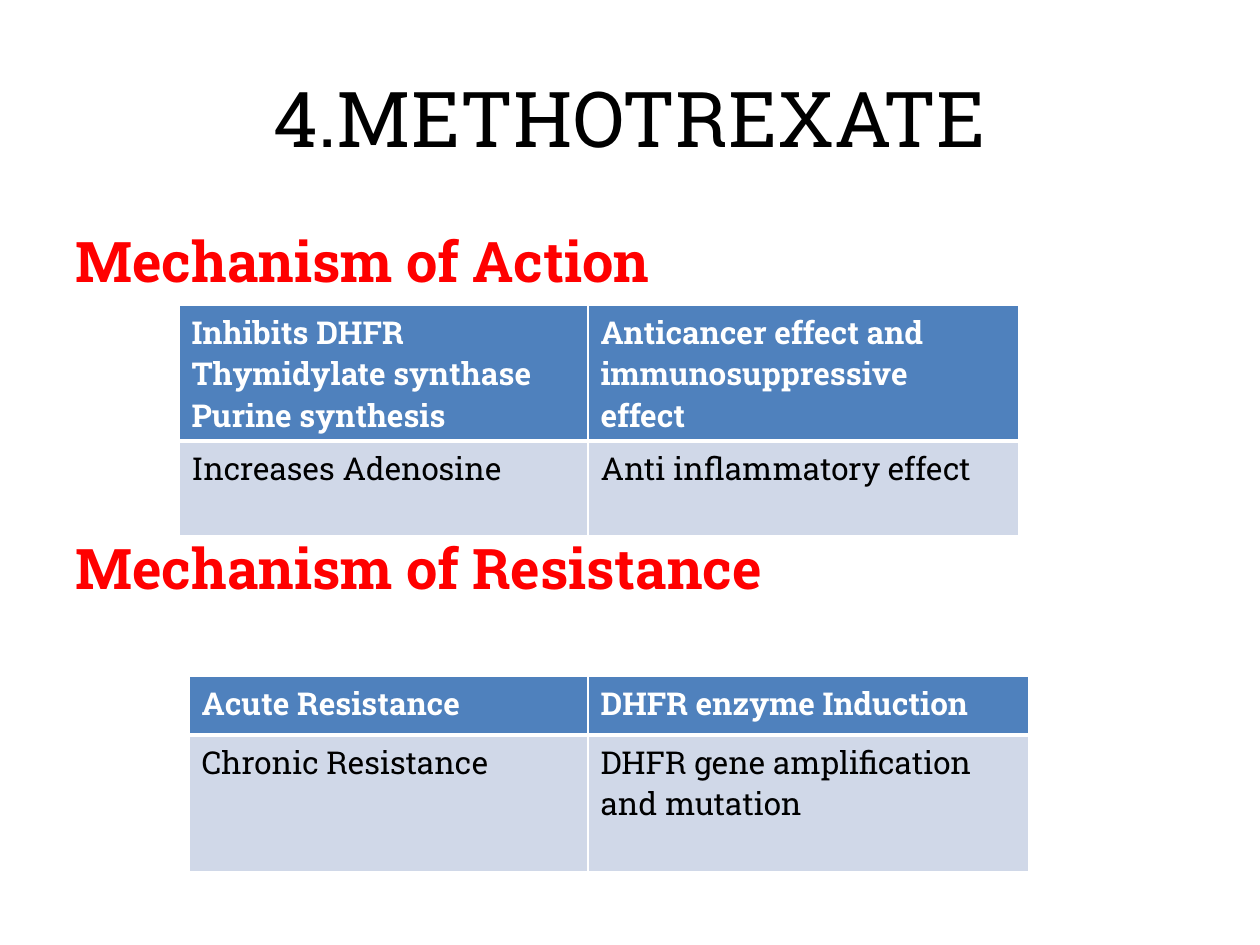
from lxml import etree
from pptx import Presentation
from pptx.dml.color import RGBColor
from pptx.enum.text import MSO_ANCHOR, PP_ALIGN
from pptx.oxml.ns import qn
from pptx.util import Pt

PX = 914400 // 126
FONT = "Roboto Slab"
MIDDLE, TOP = MSO_ANCHOR.MIDDLE, MSO_ANCHOR.TOP
CENTER, LEFT = PP_ALIGN.CENTER, PP_ALIGN.LEFT

TITLE = "4.METHOTREXATE"
HEADINGS = ["Mechanism of Action", "Mechanism of Resistance"]
HEADING_GAP = 137  # points, leaves room for the first table

TABLES = [
    {"left": 179, "top": 305, "columns": [409, 431], "rows": [136, 95],
     "cells": [["Inhibits DHFR Thymidylate synthase Purine synthesis",
                "Anticancer effect and immunosuppressive\veffect"],
               ["Increases Adenosine", "Anti inflammatory effect"]]},
    {"left": 189, "top": 676, "columns": [399, 441], "rows": [59, 137],
     "cells": [["Acute Resistance", "DHFR enzyme Induction"],
               ["Chronic Resistance", "DHFR gene amplification and mutation"]]},
]

TITLE_STYLE = {"size": Pt(44), "bold": False, "color": "000000"}
HEADING_STYLE = {"size": Pt(32), "bold": True, "color": "FF0000"}
ROW_STYLES = [
    {"fill": "4F81BD", "bottom": 3,
     "font": {"size": Pt(18), "bold": True, "color": "FFFFFF"}},
    {"fill": "D0D8E8", "bottom": 1,
     "font": {"size": Pt(18), "bold": False, "color": "000000"}},
]


def rgb(value):
    return RGBColor.from_string(value)


def style_font(font, style):
    font.name = FONT
    for key, value in style.items():
        if key == "color":
            font.color.rgb = rgb(value)
        else:
            setattr(font, key, value)


def add_text(slide, box, lines, style, align, anchor, gap=0):
    frame = slide.shapes.add_textbox(*(n * PX for n in box)).text_frame
    frame.word_wrap = True
    frame.vertical_anchor = anchor
    frame.text = "\n".join(lines)
    for index, paragraph in enumerate(frame.paragraphs):
        paragraph.alignment = align
        paragraph.space_before = Pt(gap if index else 0)
        for run in paragraph.runs:
            style_font(run.font, style)


def set_borders(cell, widths):
    """Draw white borders; they must precede the fill in the cell properties."""
    properties = cell._tc.get_or_add_tcPr()
    for index, (side, width) in enumerate(widths.items()):
        line = etree.Element(qn(f"a:ln{side}"), w=str(Pt(width)))
        fill = etree.SubElement(line, qn("a:solidFill"))
        etree.SubElement(fill, qn("a:srgbClr"), val="FFFFFF")
        properties.insert(index, line)


def add_mechanism_table(slide, content):
    columns, rows = content["columns"], content["rows"]
    box = content["left"], content["top"], sum(columns), sum(rows)
    table = slide.shapes.add_table(
        len(rows), len(columns), *(n * PX for n in box)).table
    for column, width in zip(table.columns, columns):
        column.width = width * PX
    for row, height, texts, style in zip(
            table.rows, rows, content["cells"], ROW_STYLES):
        row.height = height * PX
        top = 3 if style is ROW_STYLES[1] else 1
        for cell, text in zip(row.cells, texts):
            cell.text = text
            cell.fill.solid()
            cell.fill.fore_color.rgb = rgb(style["fill"])
            set_borders(cell, {"L": 1, "R": 1, "T": top, "B": style["bottom"]})
            for run in cell.text_frame.paragraphs[0].runs:
                style_font(run.font, style["font"])


def main():
    deck = Presentation()
    deck.slide_width, deck.slide_height = 1260 * PX, 945 * PX
    slide = deck.slides.add_slide(deck.slide_layouts[6])
    add_text(slide, (63, 38, 1134, 157), [TITLE], TITLE_STYLE, CENTER, MIDDLE)
    add_text(slide, (63, 220, 1134, 624), HEADINGS, HEADING_STYLE, LEFT, TOP,
             HEADING_GAP)
    for content in TABLES:
        add_mechanism_table(slide, content)
    deck.save("out.pptx")


if __name__ == "__main__":
    main()
